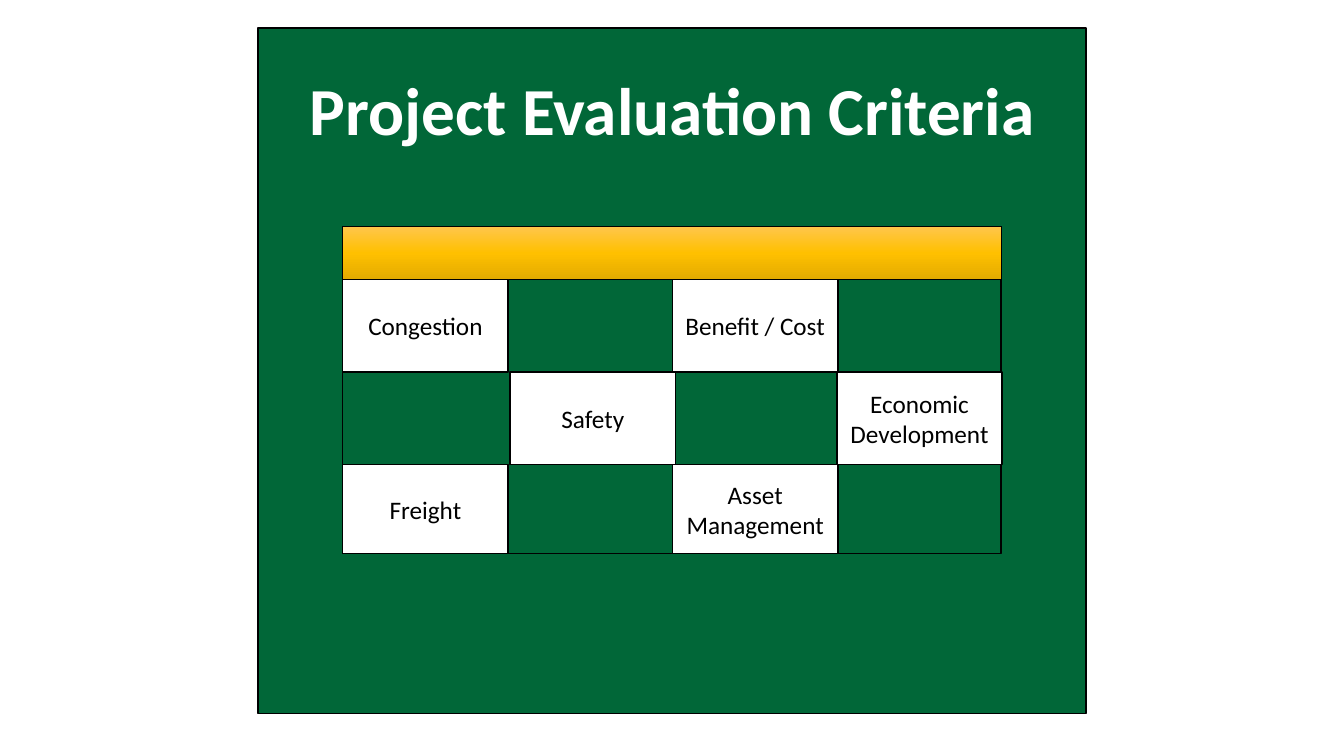
"""Build the project evaluation criteria slide."""
from copy import deepcopy
from dataclasses import dataclass

from pptx import Presentation
from pptx.dml.color import RGBColor
from pptx.enum.shapes import MSO_SHAPE
from pptx.enum.text import MSO_ANCHOR, PP_ALIGN
from pptx.oxml.ns import qn
from pptx.util import Pt

RECT = MSO_SHAPE.RECTANGLE
MIDDLE = MSO_ANCHOR.MIDDLE
CENTER = PP_ALIGN.CENTER
EMU_PER_PX = 9144
FONT = "Calibri"
COLORS = {
    "green": "016738", "white": "FFFFFF", "black": "000000",
    "gold_light": "FFC64B", "gold": "FFC000", "gold_dark": "E3AB00",
}
GRID_LEFT, GRID_TOP, GRID_WIDTH, GRID_HEIGHT = 340, 225, 653, 324
BAR_HEIGHT, CELL_WIDTH = 52, 164
COLUMN_LEFTS = (340, 506, 667, 830)
ROW_HEIGHTS = (92, 92, 88)


@dataclass
class Criterion:
    """A labelled white square of the checkerboard."""
    text: str
    row: int
    col: int


CRITERIA = [
    Criterion("Congestion", 0, 0),
    Criterion("Benefit / Cost", 0, 2),
    Criterion("Safety", 1, 1),
    Criterion("Economic Development", 1, 3),
    Criterion("Freight", 2, 0),
    Criterion("Asset Management", 2, 2),
]


def px(n: int) -> int:
    """Turn px into EMU."""
    return n * EMU_PER_PX


def rgb(name: str) -> RGBColor:
    """Look up a named colour."""
    return RGBColor.from_string(COLORS[name])


def add_rect(shapes, left: int, top: int, width: int, height: int,
             fill: str, line_pt: float = 1):
    """Add a filled rectangle with a black outline."""
    sp = shapes.add_shape(RECT, px(left), px(top), px(width), px(height))
    sp.shadow.inherit = False
    sp.fill.solid()
    sp.fill.fore_color.rgb = rgb(fill)
    sp.line.color.rgb = rgb("black")
    sp.line.width = Pt(line_pt)
    return sp


def set_text(sp, text: str, size: int, color: str, bold: bool = False) -> None:
    """Set centred text in a shape."""
    tf = sp.text_frame
    tf.text = text
    tf.word_wrap = True
    tf.vertical_anchor = MIDDLE
    p = tf.paragraphs[0]
    p.alignment = CENTER
    font = p.runs[0].font
    font.name, font.size, font.bold = FONT, Pt(size), bold
    font.color.rgb = rgb(color)


def set_gold_gradient(sp) -> None:
    """Fill a shape with gold, darkening downwards."""
    sp.fill.gradient()
    sp.fill.gradient_angle = 270
    stops = sp.element.spPr.find(qn("a:gradFill")).find(qn("a:gsLst"))
    stops.append(deepcopy(stops[0]))
    names = ("gold_light", "gold", "gold_dark")
    for i, (stop, name) in enumerate(zip(sp.fill.gradient_stops, names)):
        stop.position = i / 2
        stop.color.rgb = rgb(name)


def add_criterion(shapes, criterion: Criterion) -> None:
    """Draw one criterion in its grid square."""
    top = GRID_TOP + BAR_HEIGHT + sum(ROW_HEIGHTS[:criterion.row])
    sp = add_rect(shapes, COLUMN_LEFTS[criterion.col], top, CELL_WIDTH,
                  ROW_HEIGHTS[criterion.row], "white")
    set_text(sp, criterion.text, 18, "black")


def main() -> None:
    """Build and save the slide."""
    prs = Presentation()
    prs.slide_width, prs.slide_height = px(1333), px(750)
    s = prs.slides.add_slide(prs.slide_layouts[5])

    title = s.shapes.title
    title.left, title.top, title.width, title.height = map(px, (92, 40, 1150, 145))
    set_text(title, "Project Evaluation Criteria", 48, "white", bold=True)
    title.text_frame.paragraphs[0].line_spacing = 0.9
    panel = add_rect(s.shapes, 256, 28, 821, 680, "green")
    title.element.addprevious(panel.element)

    grid = s.shapes.add_group_shape().shapes
    add_rect(grid, GRID_LEFT, GRID_TOP, GRID_WIDTH, GRID_HEIGHT, "green")
    bar = add_rect(grid, GRID_LEFT, GRID_TOP, GRID_WIDTH, BAR_HEIGHT, "gold", 0.5)
    set_gold_gradient(bar)
    for criterion in CRITERIA:
        add_criterion(grid, criterion)

    prs.save("out.pptx")


if __name__ == "__main__":
    main()
